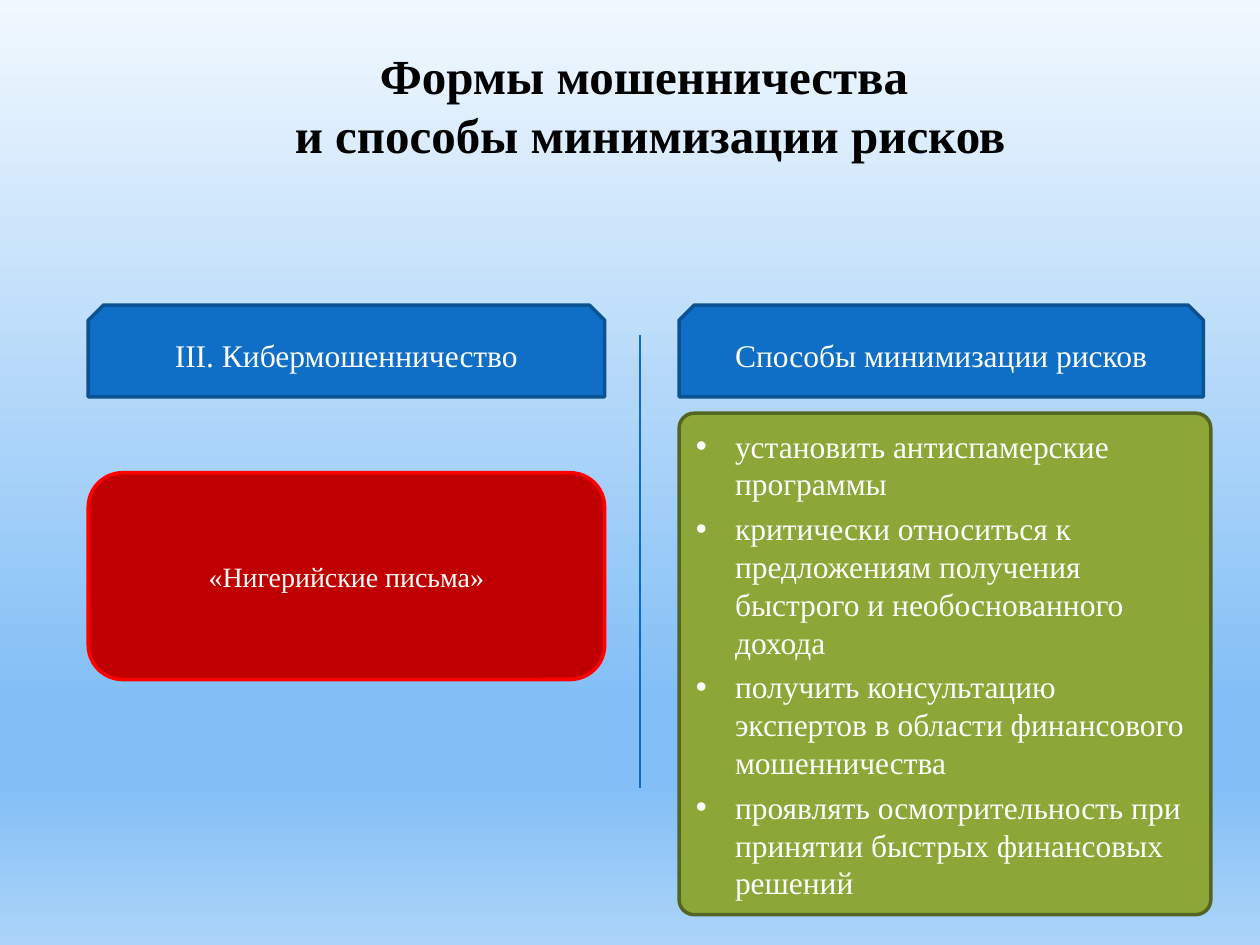
"""Build a slide on cyber fraud and the ways to reduce its risks."""
from dataclasses import dataclass

from lxml.etree import SubElement
from pptx import Presentation
from pptx.dml.color import RGBColor as Color
from pptx.enum.shapes import MSO_CONNECTOR as Connector, MSO_SHAPE as Preset
from pptx.enum.text import MSO_ANCHOR as Anchor, MSO_AUTO_SIZE as AutoSize, PP_ALIGN as Align
from pptx.oxml.ns import qn
from pptx.util import Cm, Pt


@dataclass(frozen=True)
class Theme:
    """Colours, font and type sizes of the slide."""
    font: str = "Times New Roman"
    title_size: int = 28
    body_size: int = 18
    example_size: int = 16
    title: str = "000000"
    text: str = "FFFFFF"
    header: tuple = ("0F6FC6", "0B5292")
    example: tuple = ("C00000", "FF0000")
    advice: tuple = ("8CA737", "546422")
    divider: str = "0A6DC6"
    sky: tuple = ((0, "F1F8FE"), (74, "83BFF6"), (83, "83BFF6"), (100, "ACD4F9"))


THEME = Theme()
LEFT_COLUMN = 1.78
RIGHT_COLUMN = 13.69
HEADER_TOP, HEADER_HEIGHT = 6.15, 1.85
ADVICE = (
    "установить антиспамерские программы",
    "критически относиться к предложениям получения быстрого и необоснованного дохода",
    "получить консультацию экспертов в области финансового мошенничества",
    "проявлять осмотрительность при принятии быстрых финансовых решений",
)


def apply(target, values):
    """Set every attribute named in values on the target."""
    for name, value in values.items():
        setattr(target, name, value)


def format_text(paragraph, size, color, bold=False, **layout):
    """Format a paragraph and all its runs."""
    apply(paragraph, layout)
    for run in paragraph.runs:
        apply(run.font, {"name": THEME.font, "size": Pt(size), "bold": bold})
        run.font.color.rgb = Color.from_string(color)


def paint_background(slide):
    """Fill the background with the vertical sky gradient."""
    fill = slide.background.fill
    fill.gradient()
    fill.gradient_angle = 270
    stops = next(slide.element.iter(qn("a:gsLst")))
    for stop in list(stops):
        stops.remove(stop)
    for percent, color in THEME.sky:
        stop = SubElement(stops, qn("a:gs"), pos=str(percent * 1000))
        SubElement(stop, qn("a:srgbClr"), val=color)


def set_title(slide, text):
    """Place and format the title placeholder."""
    title = slide.shapes.title
    apply(title, {"left": Cm(3.58), "top": Cm(0.79), "width": Cm(19.05), "height": Cm(2.64)})
    frame = title.text_frame
    frame.text = text
    apply(frame, {"word_wrap": True, "auto_size": AutoSize.SHAPE_TO_FIT_TEXT,
                  "vertical_anchor": Anchor.TOP})
    format_text(frame.paragraphs[0], THEME.title_size, THEME.title, bold=True,
                alignment=Align.CENTER)


def add_panel(slide, preset, box, colors):
    """Add a filled and outlined shape."""
    shape = slide.shapes.add_shape(preset, *map(Cm, box))
    fill, line = colors
    shape.shadow.inherit = False
    shape.fill.solid()
    shape.fill.fore_color.rgb = Color.from_string(fill)
    shape.line.color.rgb = Color.from_string(line)
    shape.line.width = Pt(2)
    shape.text_frame.word_wrap = True
    return shape


def add_label(slide, preset, box, colors, text, size):
    """Add a panel with one centred line of text."""
    frame = add_panel(slide, preset, box, colors).text_frame
    frame.text = text
    frame.vertical_anchor = Anchor.MIDDLE
    format_text(frame.paragraphs[0], size, THEME.text, alignment=Align.CENTER)


def add_bullet(paragraph):
    """Give a paragraph a hanging round bullet."""
    properties = paragraph._p.get_or_add_pPr()
    indent = Cm(0.79)
    properties.set("marL", str(indent))
    properties.set("indent", str(-indent))
    SubElement(properties, qn("a:buFont"), typeface="Arial")
    SubElement(properties, qn("a:buChar"), char="•")


def add_advice(slide, box, items):
    """Add the panel with the bulleted advice."""
    shape = add_panel(slide, Preset.ROUNDED_RECTANGLE, box, THEME.advice)
    shape.adjustments[0] = 0.03
    frame = shape.text_frame
    frame.text = "\n".join(items)
    frame.vertical_anchor = Anchor.MIDDLE
    for paragraph in frame.paragraphs:
        format_text(paragraph, THEME.body_size, THEME.text, alignment=Align.LEFT,
                    space_before=Pt(2), space_after=Pt(2))
        add_bullet(paragraph)


def add_divider(slide, x, top, bottom):
    """Add the thin vertical line between the columns."""
    line = slide.shapes.add_connector(Connector.STRAIGHT, Cm(x), Cm(top), Cm(x), Cm(bottom))
    line.line.color.rgb = Color.from_string(THEME.divider)
    line.line.width = Pt(0.75)
    SubElement(line.element.spPr, qn("a:effectLst"))


def main():
    """Build and save the presentation."""
    presentation = Presentation()
    apply(presentation, {"slide_width": Cm(25.4), "slide_height": Cm(19.05)})
    slide = presentation.slides.add_slide(presentation.slide_layouts[5])
    paint_background(slide)
    set_title(slide, "Формы мошенничества \vи способы минимизации рисков")
    add_label(slide, Preset.ROUNDED_RECTANGLE, (LEFT_COLUMN, 9.53, 10.41, 4.17),
              THEME.example, "«Нигерийские письма»", THEME.example_size)
    headers = ((LEFT_COLUMN, 10.41, "III. Кибермошенничество"),
               (RIGHT_COLUMN, 10.57, "Способы минимизации рисков"))
    for left, width, text in headers:
        add_label(slide, Preset.SNIP_2_SAME_RECTANGLE, (left, HEADER_TOP, width, HEADER_HEIGHT),
                  THEME.header, text, THEME.body_size)
    add_advice(slide, (RIGHT_COLUMN, 8.33, 10.72, 10.11), ADVICE)
    add_divider(slide, 12.9, 6.76, 15.88)
    presentation.save("out.pptx")


if __name__ == "__main__":
    main()
